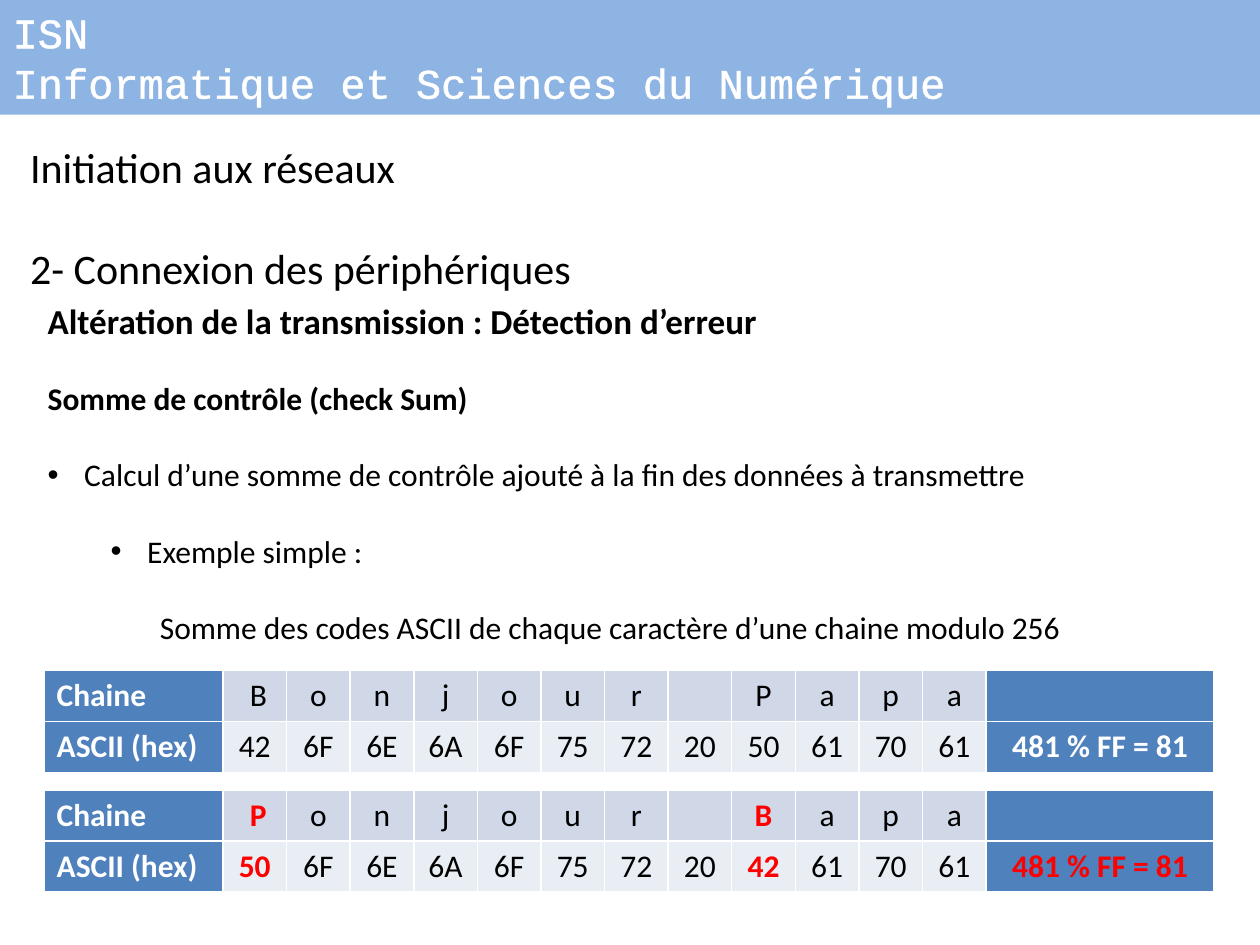
from lxml import etree
from pptx import Presentation
from pptx.dml.color import RGBColor
from pptx.enum.text import MSO_ANCHOR, MSO_AUTO_SIZE, PP_ALIGN
from pptx.oxml import parse_xml
from pptx.oxml.ns import nsdecls, qn
from pptx.util import Inches, Pt

LEFT, CENTER = PP_ALIGN.LEFT, PP_ALIGN.CENTER
MIDDLE, TOP = MSO_ANCHOR.MIDDLE, MSO_ANCHOR.TOP
NO_FIT = MSO_AUTO_SIZE.NONE

COLORS = {
    "banner": "8EB4E3", "white": "FFFFFF", "black": "000000", "red": "FF0000",
    "label": "4F81BD", "letters": "D0D8E8", "codes": "E9EDF4",
}
BODY_FONT, BANNER_FONT = "Calibri", "Courier New"
LINE = 1.22  # line height as a share of the text size
TITLE_ONLY = 5
BORDER_SIDES = ("lnL", "lnR", "lnT", "lnB")

LETTERS = [" B", "o", "n", "j", "o", "u", "r", "", "P", "a", "p", "a"]
CODES = ["42", "6F", "6E", "6A", "6F", "75", "72", "20", "50", "61", "70", "61"]
SWAPPED_LETTERS = [" P"] + LETTERS[1:8] + ["B"] + LETTERS[9:]
SWAPPED_CODES = ["50"] + CODES[1:8] + ["42"] + CODES[9:]
CHECKSUM = "481 % FF = 81"


def rgb(name):
    return RGBColor.from_string(COLORS[name])


def style(paragraph, size, color="black", bold=False, font=BODY_FONT):
    for run in paragraph.runs:
        run.font.size = Pt(size)
        run.font.name = font
        run.font.bold = bold
        run.font.color.rgb = rgb(color)


def indent(paragraph, left, bullet):
    """Set the left margin in inches, with a hanging bullet if asked."""
    props = paragraph._p.get_or_add_pPr()
    props.set("marL", str(Inches(left)))
    props.set("indent", str(Inches(-0.29 if bullet else 0)))
    if bullet:
        etree.SubElement(props, qn("a:buFont")).set("typeface", "Arial")
        etree.SubElement(props, qn("a:buChar")).set("char", "•")


def solid_line(tag, width, color):
    return parse_xml(
        f'<a:{tag} {nsdecls("a")} w="{Pt(width)}"><a:solidFill>'
        f'<a:srgbClr val="{COLORS[color]}"/></a:solidFill></a:{tag}>')


def add_banner(slide, box):
    banner = slide.shapes.title
    banner.left, banner.top, banner.width, banner.height = map(Inches, box)
    banner.fill.solid()
    banner.fill.fore_color.rgb = rgb("banner")
    frame = banner.text_frame
    frame.text = "ISN\nInformatique et Sciences du Numérique"
    frame.auto_size = NO_FIT
    frame.vertical_anchor = TOP
    for paragraph in frame.paragraphs:
        paragraph.alignment = LEFT
        style(paragraph, 24, "white", font=BANNER_FONT)
        for run in paragraph.runs:
            run._r.get_or_add_rPr().insert(0, solid_line("ln", 1.45, "white"))


def add_text(slide, box, lines, size, wrap=True):
    """Write lines of (text, bold, indent, bullet), one blank line apart."""
    frame = slide.shapes.add_textbox(*map(Inches, box)).text_frame
    frame.word_wrap = wrap
    frame.text = "\n".join(line[0] for line in lines)
    for index, (paragraph, line) in enumerate(zip(frame.paragraphs, lines)):
        _, bold, left, bullet = line
        if index:
            paragraph.space_before = Pt(round(size * LINE, 1))
        if left:
            indent(paragraph, left, bullet)
        style(paragraph, size, bold=bold)


def fill_cell(cell, text, fill, color, bold, align):
    cell.fill.solid()
    cell.fill.fore_color.rgb = rgb(fill)
    paragraph = cell.text_frame.paragraphs[0]
    paragraph.text = text
    paragraph.alignment = align
    style(paragraph, 18, color, bold)
    cell.vertical_anchor = MIDDLE if align == LEFT else TOP
    for place, side in enumerate(BORDER_SIDES):
        cell._tc.get_or_add_tcPr().insert(place, solid_line(side, 1, "white"))


def add_checksum_table(slide, box, letters, codes, swapped=(), sum_color="white"):
    """Draw a string over its codes; the swapped columns stand out in red."""
    rows = [["Chaine", *letters, ""], ["ASCII (hex)", *codes, CHECKSUM]]
    last = len(rows[0]) - 1
    table = slide.shapes.add_table(2, last + 1, *map(Inches, box)).table
    table.first_row = table.horz_banding = False

    label_width, sum_width = 1.42, 1.81
    letter_width = (box[2] - label_width - sum_width) / len(letters)
    widths = [label_width] + [letter_width] * len(letters) + [sum_width]
    for column, width in zip(table.columns, widths):
        column.width = Inches(width)

    for r, (row, fill) in enumerate(zip(rows, ("letters", "codes"))):
        for c, text in enumerate(row):
            cell = table.cell(r, c)
            if c == 0:
                fill_cell(cell, text, "label", "white", True, LEFT)
            elif c == last:
                fill_cell(cell, text, "label", sum_color, True, CENTER)
            else:
                marked = c in swapped
                color = "red" if marked else "black"
                fill_cell(cell, text, fill, color, marked, CENTER)


def main():
    deck = Presentation()
    deck.slide_width, deck.slide_height = Inches(10), Inches(7.5)
    slide = deck.slides.add_slide(deck.slide_layouts[TITLE_ONLY])

    # Course banner and chapter headings
    add_banner(slide, (0, 0, 10, 0.91))
    add_text(slide, (0.14, 1.07, 4.61, 1.31), [
        ("Initiation aux réseaux", False, 0, False),
        ("2- Connexion des périphériques", False, 0, False),
    ], 24, wrap=False)
    add_text(slide, (0.28, 2.33, 9.37, 0.44), [
        ("Altération de la transmission : Détection d’erreur", True, 0, False),
    ], 20)

    # Checksum explanation
    add_text(slide, (0.28, 2.96, 9.72, 3.13), [
        ("Somme de contrôle (check Sum)", True, 0, False),
        ("Calcul d’une somme de contrôle ajouté à la fin des données à transmettre",
         False, 0.29, True),
        ("Exemple simple :", False, 0.79, True),
        ("Somme des codes ASCII de chaque caractère d’une chaine modulo 256",
         False, 0.89, False),
    ], 18)

    # The string, then the same string with two letters exchanged
    add_checksum_table(slide, (0.35, 5.32, 9.29, 0.81), LETTERS, CODES)
    add_checksum_table(slide, (0.35, 6.27, 9.29, 0.81), SWAPPED_LETTERS,
                       SWAPPED_CODES, swapped=(1, 9), sum_color="red")

    deck.save("out.pptx")


if __name__ == "__main__":
    main()
